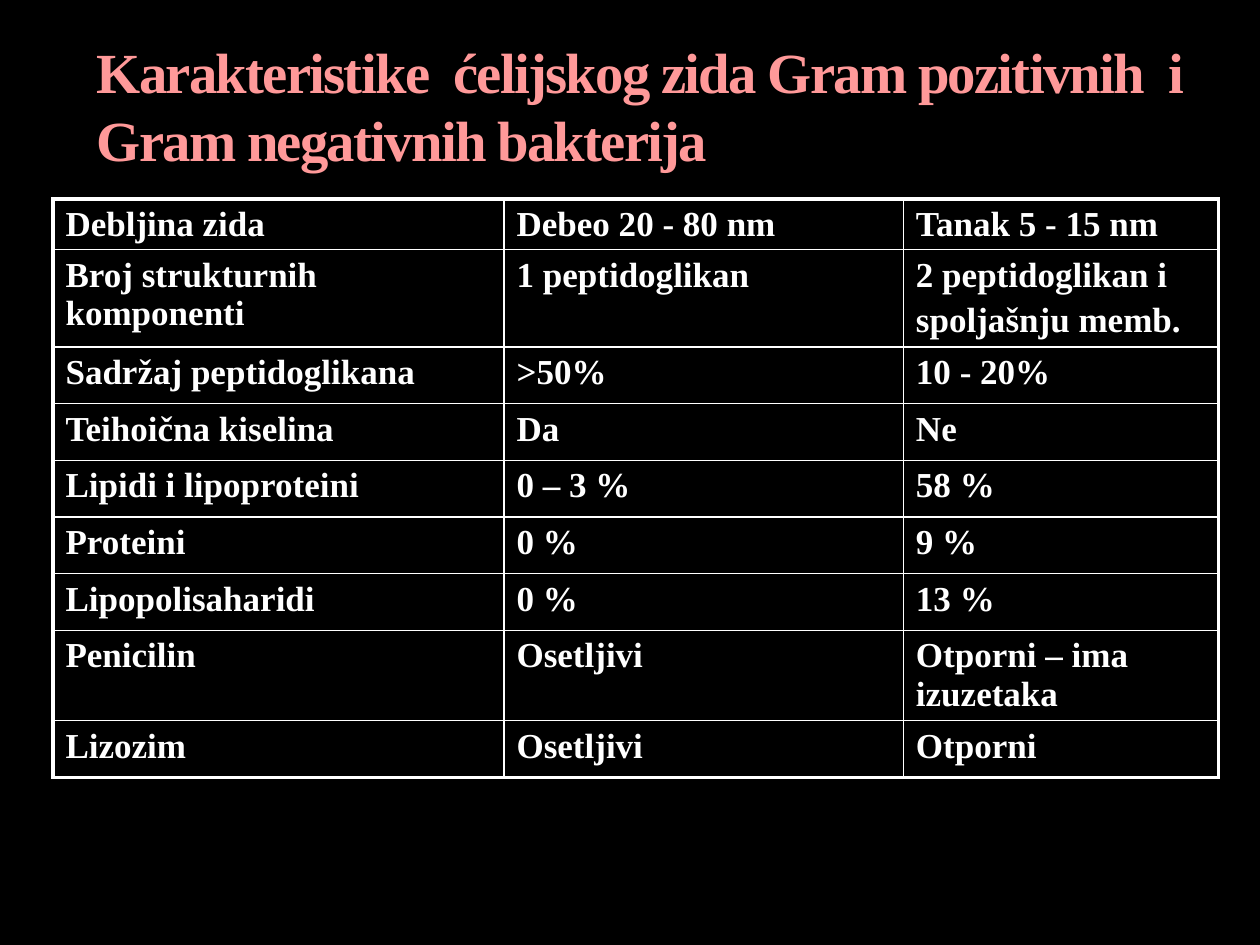
import pptx
import pptx.dml.color
import pptx.enum.text
import pptx.oxml
import pptx.oxml.ns
import pptx.util
from pptx.util import Inches, Pt

BLACK = pptx.dml.color.RGBColor(0x00, 0x00, 0x00)
WHITE = pptx.dml.color.RGBColor(0xFF, 0xFF, 0xFF)
PINK = pptx.dml.color.RGBColor(0xFF, 0x99, 0x99)
FONT = "Times New Roman"
OUTER, INNER = Pt(2.25), Pt(1)

TITLE = "Karakteristike  ćelijskog zida Gram pozitivnih  i Gram negativnih bakterija"
ROWS = [
    ("Debljina zida", "Debeo 20 - 80 nm", "Tanak 5 - 15 nm"),
    ("Broj strukturnih komponenti", "1 peptidoglikan",
     "2 peptidoglikan i\nspoljašnju memb."),
    ("Sadržaj peptidoglikana", ">50%", "10 - 20%"),
    ("Teihoična kiselina", "Da", "Ne"),
    ("Lipidi i lipoproteini", "0 – 3 %", "58 %"),
    ("Proteini", "0 %", "9 %"),
    ("Lipopolisaharidi", "0 %", "13 %"),
    ("Penicilin", "Osetljivi", "Otporni – ima izuzetaka"),
    ("Lizozim", "Osetljivi", "Otporni"),
]
COL_WIDTHS = (3.58, 3.17, 2.5)
HEADER_HEIGHT, ROW_HEIGHT = 0.4, 0.45


def set_font(font, size, color):
    for name, value in {"name": FONT, "size": Pt(size), "bold": True}.items():
        setattr(font, name, value)
    font.color.rgb = color


def add_title(slide, left, top, width, height):
    tf = slide.shapes.add_textbox(left, top, width, height).text_frame
    layout = {"word_wrap": True, "margin_bottom": Inches(0.47),
              "vertical_anchor": pptx.enum.text.MSO_ANCHOR.BOTTOM}
    for name, value in layout.items():
        setattr(tf, name, value)
    r = tf.paragraphs[0].add_run()
    r.text = TITLE
    set_font(r.font, 32.4, PINK)
    r.font._element.set("spc", "-100")


def set_borders(cell, widths):
    """Draw white borders; widths maps the sides L, R, T, B to line widths."""
    tc_pr = cell._tc.get_or_add_tcPr()
    for i, (side, width) in enumerate(widths.items()):
        tc_pr.insert(i, pptx.oxml.parse_xml(
            f'<a:ln{side} {pptx.oxml.ns.nsdecls("a")} w="{int(width)}">'
            f'<a:solidFill><a:srgbClr val="{WHITE}"/></a:solidFill>'
            f'<a:prstDash val="solid"/></a:ln{side}>'))


def fill_cell(cell, text):
    cell.fill.background()
    cell.margin_bottom = 0
    tf = cell.text_frame
    tf.text = text
    for i, p in enumerate(tf.paragraphs):
        if i:
            p.space_before = Pt(4)
        for r in p.runs:
            set_font(r.font, 20, WHITE)


def add_comparison_table(slide, left, top, width, height):
    last_row, last_col = len(ROWS) - 1, len(COL_WIDTHS) - 1
    table = slide.shapes.add_table(
        len(ROWS), len(COL_WIDTHS), left, top, width, height).table
    table.first_row = table.horz_banding = False
    for column, col_width in zip(table.columns, COL_WIDTHS):
        column.width = Inches(col_width)
    for i, texts in enumerate(ROWS):
        table.rows[i].height = Inches(ROW_HEIGHT if i else HEADER_HEIGHT)
        for j, text in enumerate(texts):
            cell = table.cell(i, j)
            fill_cell(cell, text)
            edges = {"L": j == 0, "R": j == last_col,
                     "T": i == 0, "B": i == last_row}
            set_borders(cell, {side: OUTER if outer else INNER
                               for side, outer in edges.items()})


def main():
    prs = pptx.Presentation()
    prs.slide_width, prs.slide_height = Inches(10), Inches(7.5)
    slide = prs.slides.add_slide(prs.slide_layouts[6])
    slide.background.fill.solid()
    slide.background.fill.fore_color.rgb = BLACK
    add_title(slide, Inches(0.67), Inches(0.67), Inches(9), Inches(1.17))
    add_comparison_table(slide, Inches(0.42), Inches(1.58),
                         Inches(9.25), Inches(4.73))
    prs.save("out.pptx")


if __name__ == "__main__":
    main()
